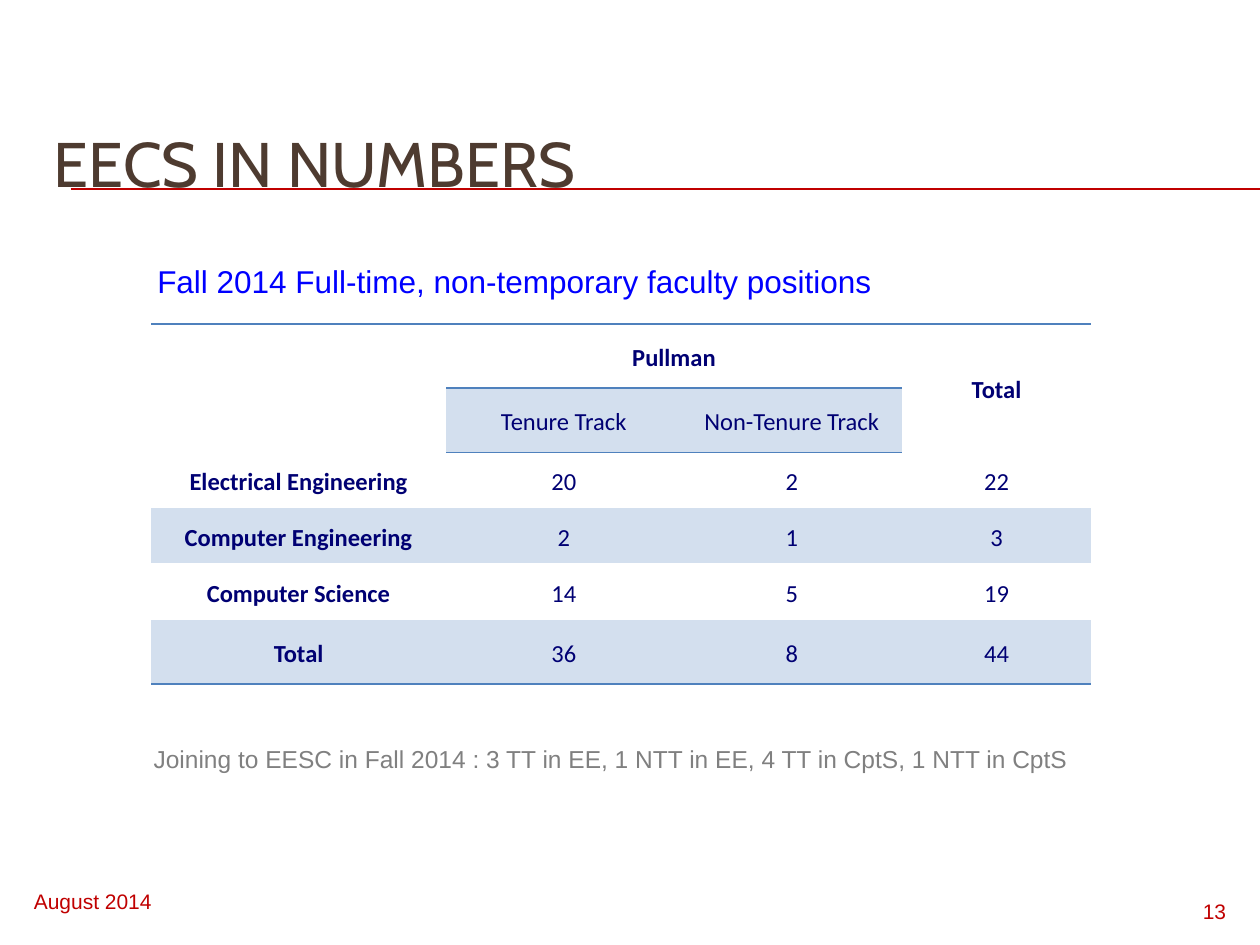
from lxml.etree import SubElement
from pptx import Presentation
from pptx.dml.color import RGBColor
from pptx.enum.shapes import MSO_CONNECTOR
from pptx.enum.text import MSO_ANCHOR, PP_ALIGN
from pptx.oxml import parse_xml
from pptx.oxml.ns import nsdecls, qn
from pptx.util import Inches, Pt

RED, NAVY, BLUE, BAND = "C00000", "000073", "4F81BD", "D3DFEE"

TEXTS = [
    ((0.33, 0.83, 9.5, 0.92), "EECS IN NUMBERS",
     dict(size=36, font="Cabin", color="4E3B30", anchor=MSO_ANCHOR.MIDDLE)),
    ((0.17, 7, 2.75, 0.32), "August 2014", dict(size=12, color=RED)),
    ((9, 7.08, 0.83, 0.27), "13", dict(size=12, color=RED, align=PP_ALIGN.RIGHT)),
    ((1.15, 2.03, 5.93, 0.4), "Fall 2014 Full-time, non-temporary faculty positions",
     dict(size=18, color="0000FF", wrap=False)),
    ((1.12, 5.86, 7.61, 0.34),
     "Joining to EESC in Fall 2014 : 3 TT in EE, 1 NTT in EE, 4 TT in CptS, 1 NTT in CptS",
     dict(size=14, color="808080")),
]
ROWS = [
    ["", "Pullman", "", "Total"],
    ["", "Tenure Track", "Non-Tenure Track", ""],
    ["Electrical Engineering", "20", "2", "22"],
    ["Computer Engineering", "2", "1", "3"],
    ["Computer Science", "14", "5", "19"],
    ["Total", "36", "8", "44"],
]
COL_WIDTHS = [2.34, 1.87, 1.75, 1.5]
ROW_HEIGHTS = [0.51, 0.51, 0.44, 0.44, 0.45, 0.51]
MERGES = [((0, 0), (1, 0)), ((0, 1), (0, 2)), ((0, 3), (1, 3))]
NO_STYLE = "{2D5ABB26-0587-4C30-8999-92F81FD0307C}"


def rgb(color):
    return RGBColor.from_string(color)


def write(tf, text, size=14, font="Arial", color=NAVY, bold=False, align=PP_ALIGN.LEFT,
          anchor=MSO_ANCHOR.TOP, wrap=True, spacing=None):
    tf.word_wrap = wrap
    tf.vertical_anchor = anchor
    p = tf.paragraphs[0]
    p.alignment = align
    p.line_spacing = spacing
    r = p.add_run()
    r.text = text
    r.font.size, r.font.name, r.font.bold = Pt(size), font, bold
    r.font.color.rgb = rgb(color)


def border(cell, side):
    cell._tc.get_or_add_tcPr().insert(0, parse_xml(
        f'<a:{side} {nsdecls("a")} w="12700"><a:solidFill><a:srgbClr val="{BLUE}"/>'
        f'</a:solidFill></a:{side}>'))


def add_faculty_table(s):
    frame = s.shapes.add_table(len(ROWS), len(COL_WIDTHS), Inches(1.2), Inches(2.57),
                               Inches(sum(COL_WIDTHS)), Inches(sum(ROW_HEIGHTS)))
    table = frame.table
    table.first_row = table.horz_banding = False
    table._tbl.tblPr.find(qn("a:tableStyleId")).text = NO_STYLE
    for col, width in zip(table.columns, COL_WIDTHS):
        col.width = Inches(width)
    for row, height in zip(table.rows, ROW_HEIGHTS):
        row.height = Inches(height)
    for first, last in MERGES:
        table.cell(*first).merge(table.cell(*last))
    last_row = len(ROWS) - 1
    for i, row in enumerate(ROWS):
        for j, text in enumerate(row):
            cell = table.cell(i, j)
            cell.margin_left = cell.margin_right = Inches(0.07)
            cell.margin_top = cell.margin_bottom = 0
            cell.vertical_anchor = MSO_ANCHOR.MIDDLE
            subheader = i == 1 and j in (1, 2)
            if subheader or i in (3, 5):
                cell.fill.solid()
                cell.fill.fore_color.rgb = rgb(BAND)
            else:
                cell.fill.background()
            if i == last_row or (i == 0 and j in (1, 2)):
                border(cell, "lnB")
            if i == 0 or subheader:
                border(cell, "lnT")
            if text:
                write(cell.text_frame, text, font="Calibri", bold=i == 0 or j == 0,
                      align=PP_ALIGN.CENTER, anchor=MSO_ANCHOR.MIDDLE, wrap=None, spacing=1.15)


prs = Presentation()
prs.slide_width, prs.slide_height = Inches(10), Inches(7.5)
s = prs.slides.add_slide(prs.slide_layouts[6])

rule = s.shapes.add_connector(MSO_CONNECTOR.STRAIGHT, Inches(0.56), Inches(1.5),
                              Inches(10), Inches(1.5))
rule.line.color.rgb = rgb(RED)
rule.line.width = Pt(0.75)
SubElement(rule._element.spPr, qn("a:effectLst"))

for box, text, style in TEXTS:
    sp = s.shapes.add_textbox(*map(Inches, box))
    write(sp.text_frame, text, **style)
add_faculty_table(s)

prs.save("out.pptx")
